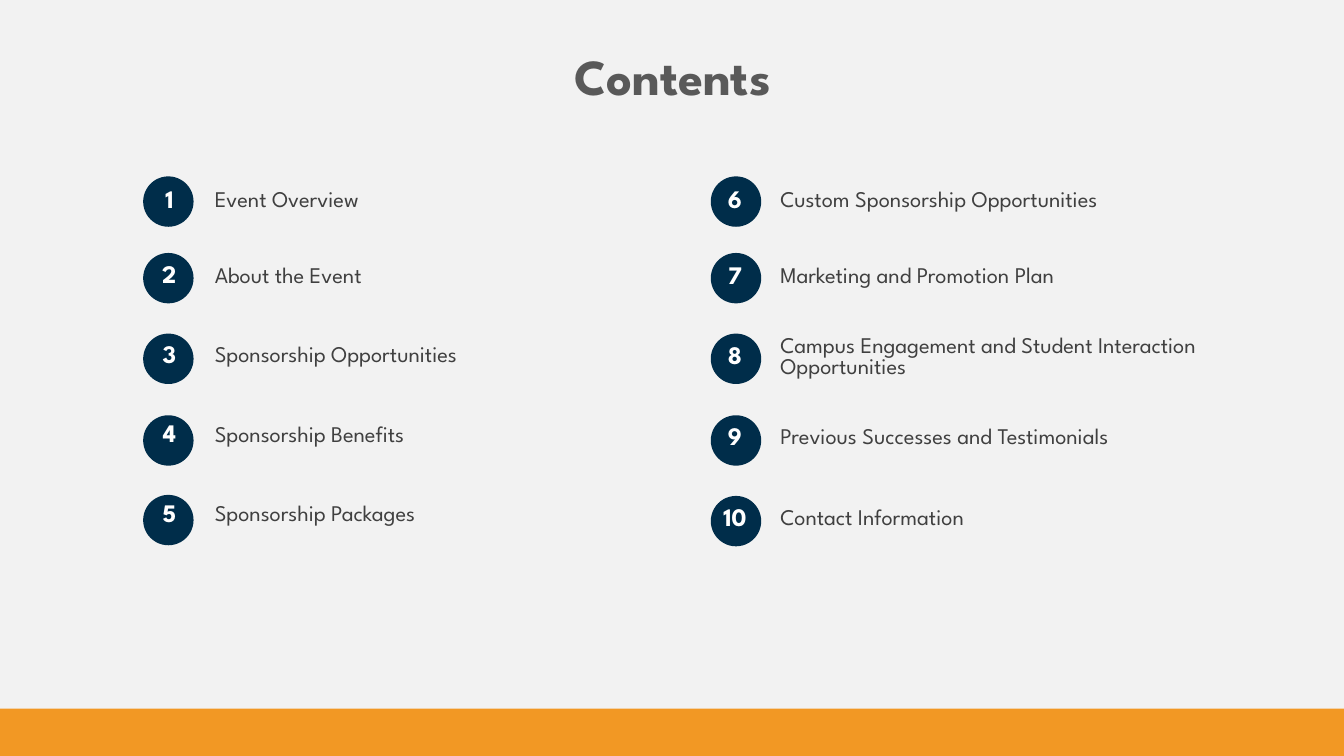
"""Build a contents slide with ten numbered topics in two columns."""
import lxml.etree
import pptx
import pptx.dml.color
import pptx.enum.shapes
import pptx.enum.text
import pptx.oxml.ns
import pptx.util

Inches = pptx.util.Inches
Pt = pptx.util.Pt
qn = pptx.oxml.ns.qn
SHAPE = pptx.enum.shapes.MSO_SHAPE
ALIGN = pptx.enum.text.PP_ALIGN
COLORS = {"background": "F2F2F2", "title": "595959", "navy": "002D4A",
          "number": "FFFFFF", "topic": "404040", "orange": "F29824"}
FORMATS = {
    "title": {"size": Pt(36), "bold": True, "name": "League Spartan"},
    "number": {"size": Pt(18), "bold": True, "name": "League Spartan"},
    "topic": {"size": Pt(16), "bold": False, "name": "League Spartan"},
}
NO_STYLE = "{2D5ABB26-0587-4C30-8999-92F81FD0307C}"


def write_text(text_frame, text, role, alignment):
    paragraph = text_frame.paragraphs[0]
    paragraph.alignment = alignment
    run = paragraph.add_run()
    run.text = text
    for attribute, value in FORMATS[role].items():
        setattr(run.font, attribute, value)
    run.font.color.rgb = pptx.dml.color.RGBColor.from_string(COLORS[role])


def add_filled_shape(kind, left, top, width, height, color):
    shape = slide.shapes.add_shape(
        kind, Inches(left), Inches(top), Inches(width), Inches(height))
    shape.shadow.inherit = False
    shape.fill.solid()
    shape.fill.fore_color.rgb = pptx.dml.color.RGBColor.from_string(COLORS[color])
    shape.line.fill.background()


presentation = pptx.Presentation()
presentation.slide_width = Inches(13.33)
presentation.slide_height = Inches(7.5)
slide = presentation.slides.add_slide(presentation.slide_layouts[6])
slide.background.fill.solid()
slide.background.fill.fore_color.rgb = pptx.dml.color.RGBColor.from_string(COLORS["background"])

title = slide.shapes.add_textbox(Inches(2.02), Inches(0.4), Inches(9.3), Inches(0.71))
title.text_frame.word_wrap = True
write_text(title.text_frame, "Contents", "title", ALIGN.CENTER)

columns = [
    {"first": 6, "circle_left": 7.05, "table_left": 7.04, "row_height": 0.8,
     "circle_tops": [1.75, 2.51, 3.31, 4.12, 4.92],
     "topics": ["Custom Sponsorship Opportunities", "Marketing and Promotion Plan",
                "Campus Engagement and Student Interaction Opportunities",
                "Previous Successes and Testimonials", "Contact Information"]},
    {"first": 1, "circle_left": 1.42, "table_left": 1.43, "row_height": 0.79,
     "circle_tops": [1.75, 2.51, 3.31, 4.12, 4.91],
     "topics": ["Event Overview", "About the Event", "Sponsorship Opportunities",
                "Sponsorship Benefits", "Sponsorship Packages"]},
]

for column in columns:
    for circle_top in column["circle_tops"]:
        add_filled_shape(SHAPE.OVAL, column["circle_left"], circle_top, 0.5, 0.5, "navy")

    topics = column["topics"]
    row_heights = [0.71] + [column["row_height"]] * (len(topics) - 1)
    frame = slide.shapes.add_table(
        len(topics), 2, Inches(column["table_left"]), Inches(1.65),
        Inches(5.44), Inches(sum(row_heights)))
    table = frame.table
    table.first_row = False
    table.horz_banding = False
    next(frame.element.iter(qn("a:tableStyleId"))).text = NO_STYLE
    table.columns[0].width = Inches(0.5)
    table.columns[1].width = Inches(4.94)

    for row, (topic, row_height) in enumerate(zip(topics, row_heights)):
        table.rows[row].height = Inches(row_height)
        number_cell, topic_cell = table.cell(row, 0), table.cell(row, 1)
        write_text(number_cell.text_frame, str(column["first"] + row), "number", ALIGN.CENTER)
        write_text(topic_cell.text_frame, topic, "topic", ALIGN.LEFT)
        topic_cell.margin_left = Inches(0.2)

        sides = (["a:lnT"] if row > 0 else []) + (["a:lnB"])
        properties = number_cell._tc.get_or_add_tcPr()
        for side in sides:
            border = lxml.etree.SubElement(properties, qn(side), w=str(Pt(0.75)))
            fill = lxml.etree.SubElement(border, qn("a:solidFill"))
            lxml.etree.SubElement(fill, qn("a:srgbClr"), val=COLORS["background"])
        for cell in (number_cell, topic_cell):
            cell.vertical_anchor = pptx.enum.text.MSO_ANCHOR.MIDDLE
            cell.fill.background()

add_filled_shape(SHAPE.RECTANGLE, 0, 7.03, 13.33, 0.47, "orange")

presentation.save("out.pptx")
